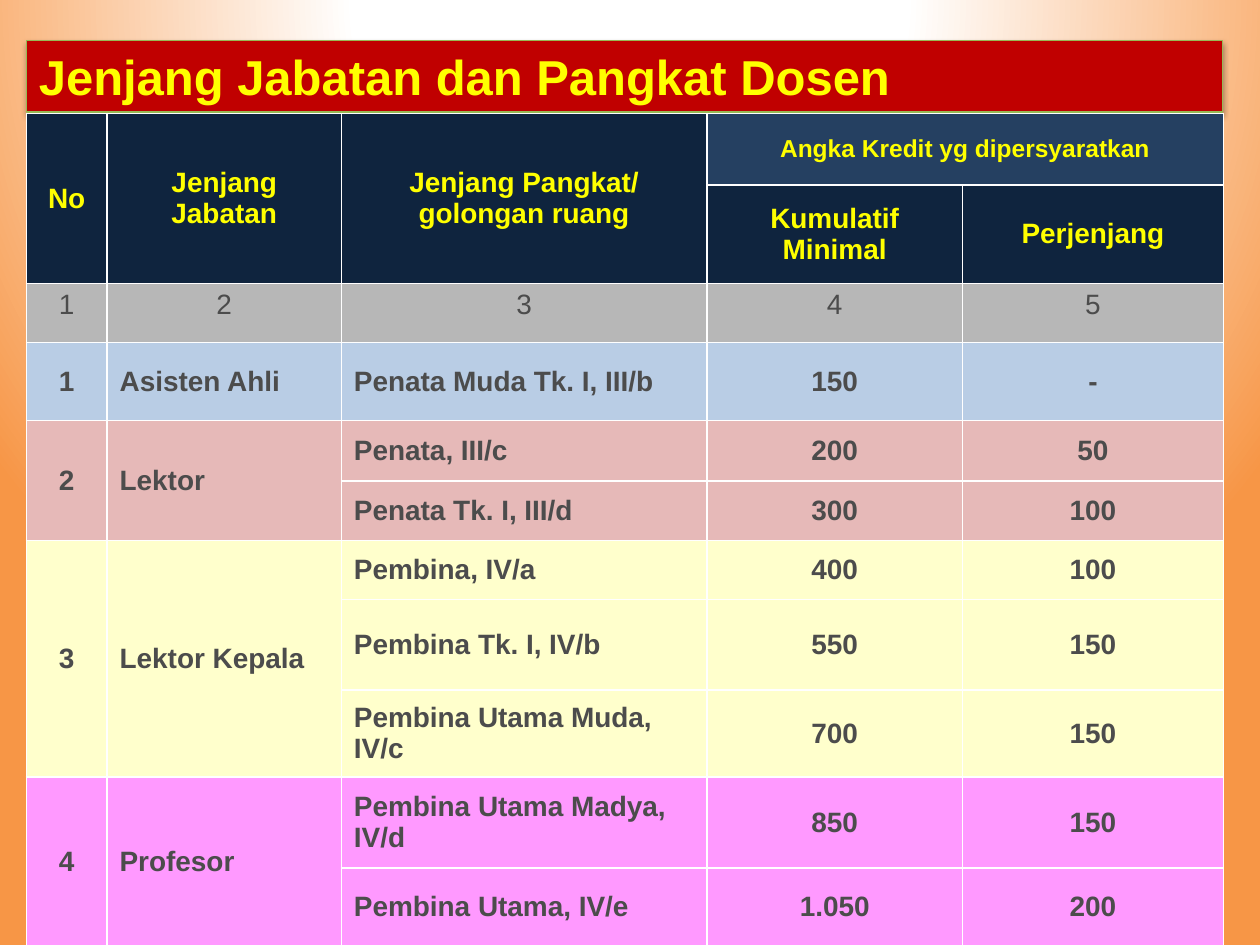
from dataclasses import dataclass

from lxml import etree
from pptx import Presentation
from pptx import util as u
from pptx.dml.color import RGBColor
from pptx.enum import shapes, text
from pptx.oxml import parse_xml
from pptx.oxml.ns import nsdecls, qn


@dataclass(frozen=True)
class Theme:
    font: str = "Arial"
    title_size: int = 28
    body_size: int = 16
    small_size: int = 14
    yellow: str = "FFFF00"
    ink: str = "4C4C4C"
    red: str = "C00000"
    green: str = "98B955"
    white: str = "FFFFFF"
    orange: str = "F79646"
    shadow: str = "000000"
    navy: str = "0F243E"
    blue: str = "254061"
    grey: str = "B7B7B7"
    ranks: tuple = ("B9CDE5", "E6B9B8", "FFFFCC", "FF99FF")


T = Theme()
LEFT, WIDTH = 0.21, 9.49
COLS = [0.64, 1.86, 2.9, 2.03, 2.07]
ROWS = [0.57, 0.78, 0.47, 0.62, 0.48, 0.47, 0.47, 0.72, 0.69, 0.72, 0.62]
HEADS = ["No", "Jenjang Jabatan", "Jenjang Pangkat/\ngolongan ruang"]
SUBHEADS = ["Kumulatif Minimal", "Perjenjang"]
POSITIONS = [
    ("Asisten Ahli", [("Penata Muda Tk. I, III/b", "150", "-")]),
    ("Lektor", [("Penata, III/c", "200", "50"),
                ("Penata Tk. I, III/d", "300", "100")]),
    ("Lektor Kepala", [("Pembina, IV/a", "400", "100"),
                       ("Pembina Tk. I, IV/b", "550", "150"),
                       ("Pembina Utama Muda, IV/c", "700", "150")]),
    ("Profesor", [("Pembina Utama Madya, IV/d", "850", "150"),
                  ("Pembina Utama, IV/e", "1.050", "200")]),
]


def write(tf, content, color, size=T.body_size, bold=True, align=text.PP_ALIGN.LEFT):
    tf.text = content
    for p in tf.paragraphs:
        p.alignment = align
        for r in p.runs:
            look = {"name": T.font, "size": u.Pt(size), "bold": bold}
            for key, value in look.items():
                setattr(r.font, key, value)
            r.font.color.rgb = RGBColor.from_string(color)


def paint_background(s):
    s.background.fill.gradient()
    grad = s.element.xpath(".//p:bg//a:gradFill")[0]
    stops = "".join(
        f'<a:gs pos="{pos * 1000}"><a:srgbClr val="{color}"/></a:gs>'
        for pos, color in ((0, T.white), (35, T.white), (100, T.orange)))
    grad.getparent().replace(grad, parse_xml(
        f'<a:gradFill {nsdecls("a")} rotWithShape="1"><a:gsLst>{stops}</a:gsLst>'
        '<a:path path="circle"><a:fillToRect l="50000" t="-80000" r="50000" b="180000"/>'
        '</a:path></a:gradFill>'))


def add_title(s):
    sp = s.shapes.add_shape(shapes.MSO_SHAPE.RECTANGLE, u.Inches(LEFT), u.Inches(0.32),
                            u.Inches(WIDTH), u.Inches(0.57))
    sp.fill.solid()
    sp.fill.fore_color.rgb = RGBColor.from_string(T.red)
    sp.line.color.rgb = RGBColor.from_string(T.green)
    sp.line.width = u.Pt(0.75)
    sp.shadow.inherit = False
    sp.element.spPr.find(qn("a:effectLst")).append(parse_xml(
        f'<a:outerShdw {nsdecls("a")} blurRad="{u.Pt(3.1)}" dist="{u.Pt(1.8)}" dir="5400000"'
        f' rotWithShape="0"><a:srgbClr val="{T.shadow}"><a:alpha val="35000"/>'
        '</a:srgbClr></a:outerShdw>'))
    tf = sp.text_frame
    tf.word_wrap = True
    tf.auto_size = text.MSO_AUTO_SIZE.SHAPE_TO_FIT_TEXT
    tf.vertical_anchor = text.MSO_ANCHOR.TOP
    write(tf, "Jenjang Jabatan dan Pangkat Dosen", T.yellow, T.title_size)


def style_cell(cell, fill):
    props = cell._tc.get_or_add_tcPr()
    for side in ("lnL", "lnR", "lnT", "lnB"):
        line = etree.SubElement(props, qn(f"a:{side}"), w=str(u.Pt(1)))
        solid = etree.SubElement(line, qn("a:solidFill"))
        etree.SubElement(solid, qn("a:srgbClr"), val=T.white)
    cell.fill.solid()
    cell.fill.fore_color.rgb = RGBColor.from_string(fill)
    cell.vertical_anchor = text.MSO_ANCHOR.MIDDLE


def put(table, row, col, content, fill, color=T.ink, span=(1, 1), **look):
    for i in range(row, row + span[0]):
        for j in range(col, col + span[1]):
            style_cell(table.cell(i, j), fill)
    cell = table.cell(row, col)
    if span != (1, 1):
        cell.merge(table.cell(row + span[0] - 1, col + span[1] - 1))
    write(cell.text_frame, content, color, **look)
    return cell


def fill_header(table):
    look = {"color": T.yellow, "align": text.PP_ALIGN.CENTER}
    for col, head in enumerate(HEADS):
        put(table, 0, col, head, T.navy, span=(2, 1), **look)
    put(table, 0, 3, "Angka Kredit yg dipersyaratkan", T.blue, span=(1, 2),
        size=T.small_size, **look)
    for col, head in enumerate(SUBHEADS, 3):
        put(table, 1, col, head, T.navy, **look)
    for col in range(len(COLS)):
        cell = put(table, 2, col, str(col + 1), T.grey, bold=False,
                   align=text.PP_ALIGN.CENTER)
        cell.vertical_anchor = text.MSO_ANCHOR.TOP


def fill_positions(table):
    center = text.PP_ALIGN.CENTER
    row = 3
    for number, ((position, grades), fill) in enumerate(zip(POSITIONS, T.ranks), 1):
        span = (len(grades), 1)
        put(table, row, 0, str(number), fill, span=span, align=center)
        put(table, row, 1, position, fill, span=span)
        for grade, total, step in grades:
            put(table, row, 2, grade, fill)
            put(table, row, 3, total, fill, align=center)
            put(table, row, 4, step, fill, align=center)
            row += 1


def add_rank_table(s):
    table = s.shapes.add_table(len(ROWS), len(COLS), u.Inches(LEFT), u.Inches(0.9),
                               u.Inches(WIDTH), u.Inches(sum(ROWS))).table
    table.first_row = table.horz_banding = False
    for column, width in zip(table.columns, COLS):
        column.width = u.Inches(width)
    for row, height in zip(table.rows, ROWS):
        row.height = u.Inches(height)
    fill_header(table)
    fill_positions(table)


def main():
    prs = Presentation()
    prs.slide_width, prs.slide_height = u.Inches(10), u.Inches(7.5)
    s = prs.slides.add_slide(prs.slide_layouts[6])
    paint_background(s)
    add_title(s)
    add_rank_table(s)
    prs.save("out.pptx")


if __name__ == "__main__":
    main()
